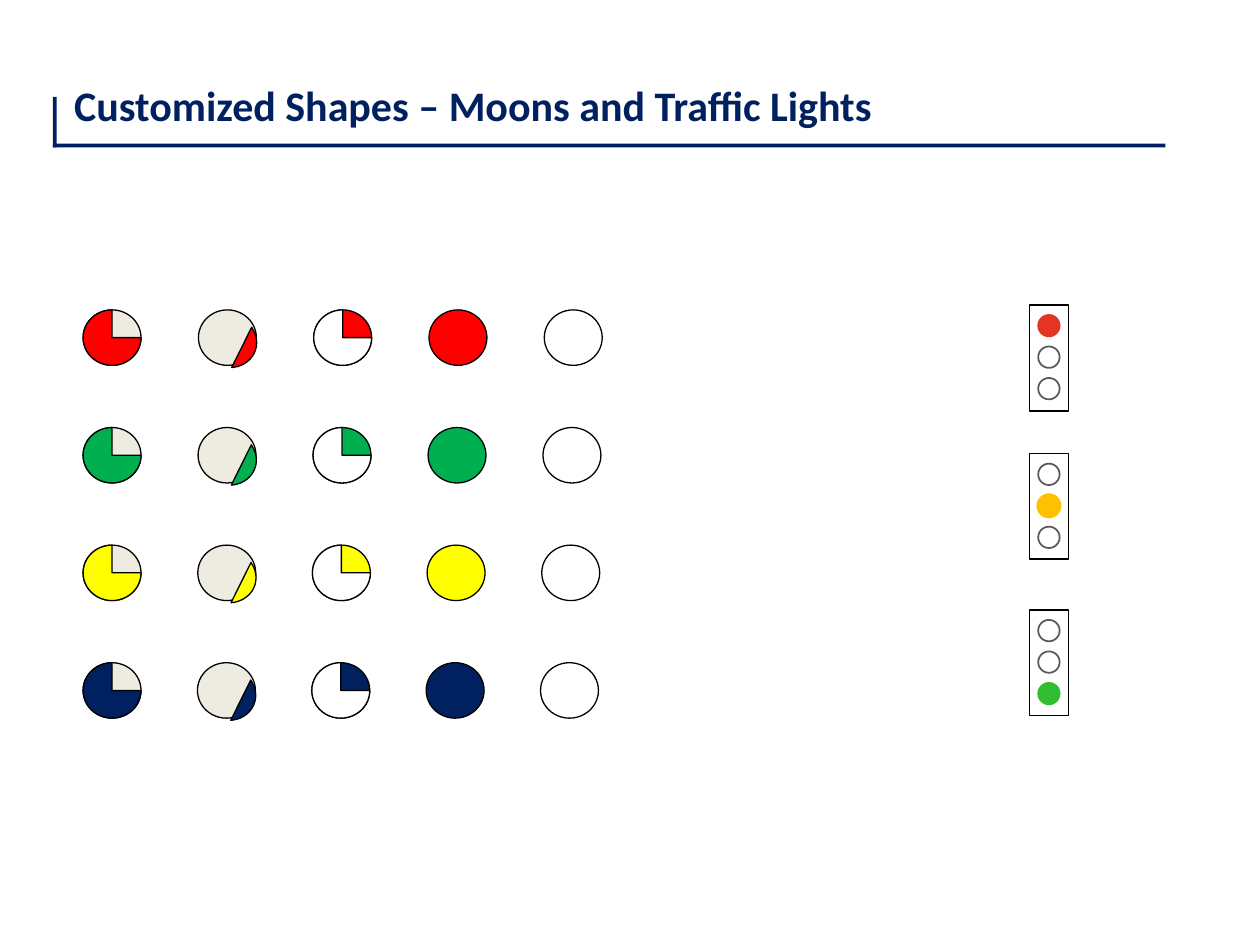
from dataclasses import dataclass

from pptx import Presentation
from pptx.dml.color import RGBColor
from pptx.enum.shapes import MSO_SHAPE
from pptx.enum.text import MSO_AUTO_SIZE
from pptx.util import Inches, Pt

ELLIPSE = MSO_SHAPE.OVAL
PIE = MSO_SHAPE.PIE
CHORD = MSO_SHAPE.CHORD
RECTANGLE = MSO_SHAPE.RECTANGLE

NAVY, BLACK, WHITE = "002060", "000000", "FFFFFF"
CREAM, GREY = "EEECE1", "595959"

MOON_LEFT, MOON_WIDTH, MOON_HEIGHT = 0.66, 0.46, 0.44
FIRST_ROW, LAST_ROW = 2.46, 5.26
MOON_COLORS = ["FF0000", "00B050", "FFFF00", NAVY]
CHORD_ANGLES = (42.955, 152.932)
ANGLE_UNIT = 0.6  # adjustment value of one degree

LIGHT_LEFT, LAMP_SIZE, LAMP_PITCH = 8.17, 0.17, 0.25


@dataclass
class TrafficLight:
    top: float
    lit_lamp: int
    color: str
    line_width: float = 1


TRAFFIC_LIGHTS = [
    TrafficLight(2.42, 0, "E43424"),
    TrafficLight(3.60, 1, "FFC000", line_width=2),
    TrafficLight(4.84, 2, "30BE30"),
]


def rgb(value: str) -> RGBColor:
    return RGBColor.from_string(value)


def add_shape(shapes, kind, left: float, top: float, width: float, height: float,
              fill: str, line: str | None = None, line_width: float = 0.75):
    shape = shapes.add_shape(kind, Inches(left), Inches(top), Inches(width), Inches(height))
    shape.shadow.inherit = False
    shape.fill.solid()
    shape.fill.fore_color.rgb = rgb(fill)
    if line:
        shape.line.color.rgb = rgb(line)
        shape.line.width = Pt(line_width)
    else:
        shape.line.fill.background()
    return shape


def add_text(slide, text: str, left: float, top: float, width: float, height: float, *,
             size: float, color: str, bold: bool = False, font_name: str = "Calibri") -> None:
    box = slide.shapes.add_textbox(Inches(left), Inches(top), Inches(width), Inches(height))
    frame = box.text_frame
    frame.word_wrap = True
    frame.auto_size = MSO_AUTO_SIZE.SHAPE_TO_FIT_TEXT
    frame.text = text
    font = frame.paragraphs[0].runs[0].font
    font.name, font.size, font.bold = font_name, Pt(size), bold
    font.color.rgb = rgb(color)


def add_moon_row(slide, top: float, last_left: float, color: str) -> None:
    """Draw five moons: three quarters, half, one quarter, full and empty."""
    shapes = slide.shapes.add_group_shape().shapes
    pitch = (last_left - MOON_LEFT) / 4

    def add_moon(column: int, kind, fill: str) -> None:
        add_shape(shapes, kind, MOON_LEFT + column * pitch, top,
                  MOON_WIDTH, MOON_HEIGHT, fill, BLACK)

    add_moon(0, ELLIPSE, CREAM)
    add_moon(0, PIE, color)
    add_moon(1, ELLIPSE, CREAM)
    half = add_shape(shapes, CHORD, MOON_LEFT + pitch + 0.02, top + 0.01,
                     0.42, 0.47, color, BLACK)
    half.rotation = 287.9
    for index, angle in enumerate(CHORD_ANGLES):
        half.adjustments[index] = angle * ANGLE_UNIT
    add_moon(2, ELLIPSE, color)
    add_moon(2, PIE, WHITE)
    add_moon(3, ELLIPSE, color)
    add_moon(4, ELLIPSE, WHITE)


def add_traffic_light(slide, light: TrafficLight) -> None:
    shapes = slide.shapes.add_group_shape().shapes
    add_shape(shapes, RECTANGLE, LIGHT_LEFT, light.top, 0.31, 0.84, WHITE, BLACK, 1)
    for lamp in range(3):
        lit = lamp == light.lit_lamp
        add_shape(shapes, ELLIPSE, LIGHT_LEFT + 0.07, light.top + 0.08 + lamp * LAMP_PITCH,
                  LAMP_SIZE, LAMP_SIZE,
                  fill=light.color if lit else WHITE,
                  line=light.color if lit else GREY,
                  line_width=light.line_width if lit else 1)


def main() -> None:
    presentation = Presentation()
    presentation.slide_width, presentation.slide_height = Inches(10), Inches(7.5)
    slide = presentation.slides.add_slide(presentation.slide_layouts[6])

    row_pitch = (LAST_ROW - FIRST_ROW) / (len(MOON_COLORS) - 1)
    for row, color in enumerate(MOON_COLORS):
        add_moon_row(slide, FIRST_ROW + row * row_pitch, 4.32 - 0.01 * row, color)

    add_text(slide, "Customized Shapes – Moons and Traffic Lights",
             0.49, 0.58, 7.33, 0.5, size=24, color=NAVY, bold=True)
    add_shape(slide.shapes, RECTANGLE, 0.42, 1.14, 8.83, 0.03, NAVY)
    add_shape(slide.shapes, RECTANGLE, 0.42, 0.77, 0.03, 0.4, NAVY)

    for light in TRAFFIC_LIGHTS:
        add_traffic_light(slide, light)

    presentation.save("out.pptx")


if __name__ == "__main__":
    main()
